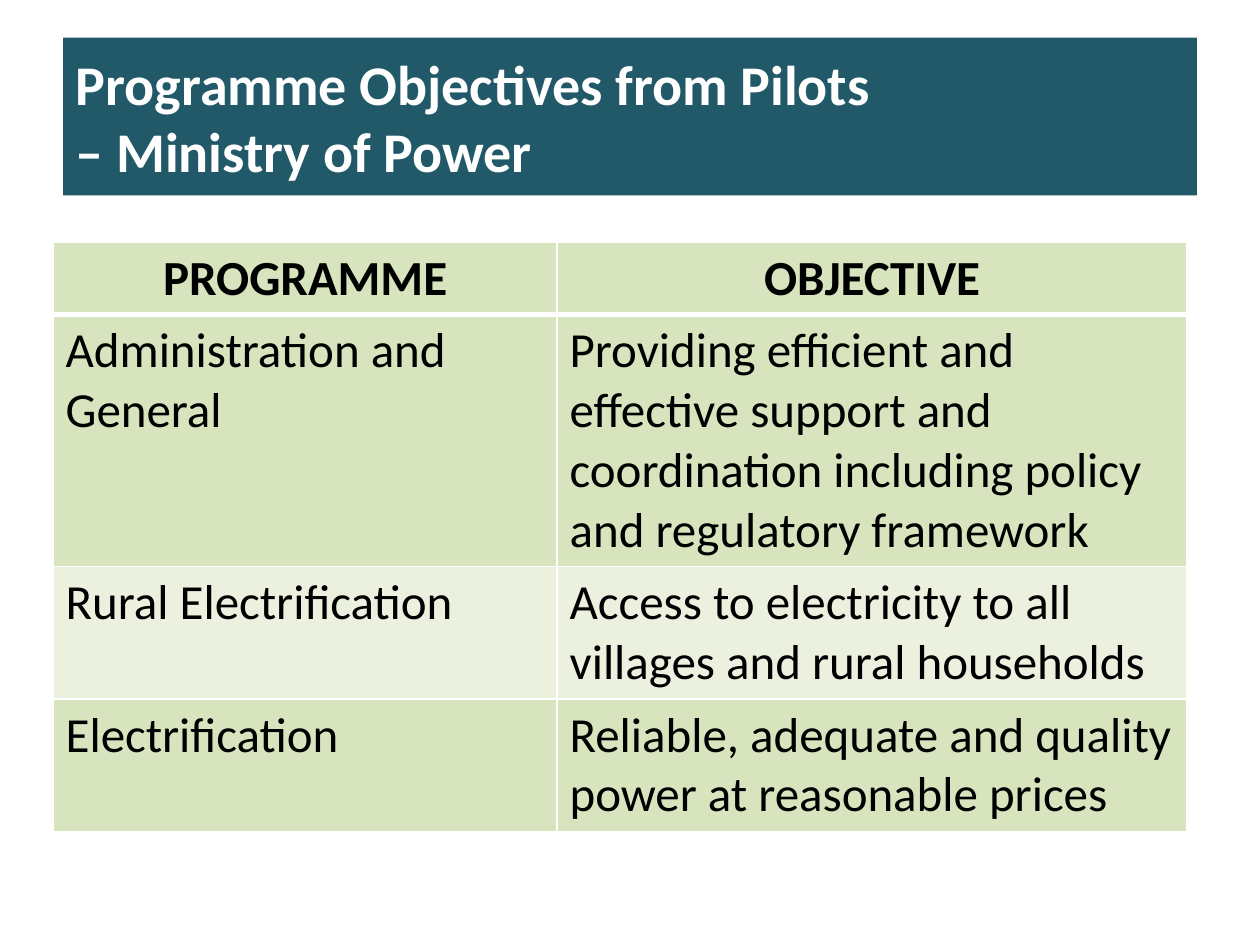
from dataclasses import dataclass

from lxml import etree
from pptx import Presentation
from pptx.dml.color import RGBColor
from pptx.enum.text import MSO_ANCHOR, MSO_AUTO_SIZE, PP_ALIGN
from pptx.oxml.ns import qn
from pptx.util import Cm, Pt

LEFT, CENTER = PP_ALIGN.LEFT, PP_ALIGN.CENTER
MIDDLE = MSO_ANCHOR.MIDDLE
NO_AUTOFIT = MSO_AUTO_SIZE.NONE
TITLE_ONLY = 5


@dataclass(frozen=True)
class Theme:
    font: str = "Calibri"
    title_size: int = 32
    table_size: int = 28
    banner: str = "215968"
    light: str = "FFFFFF"
    dark: str = "000000"
    bands: tuple = ("D7E4BD", "EBF1DE")
    thin: int = 1
    thick: int = 3


THEME = Theme()

TITLE = "Programme Objectives from Pilots \v– Ministry of Power"
HEADINGS = ("PROGRAMME", "OBJECTIVE")
PROGRAMMES = (
    ("Administration and General",
     "Providing efficient and effective support and coordination "
     "including policy and regulatory framework"),
    ("Rural Electrification",
     "Access to electricity to all villages and rural households"),
    ("Electrification",
     "Reliable, adequate and quality power at reasonable prices"),
)
COLUMN_SHARES = (4, 5)
ROW_HEIGHTS = (1.32, 3.28, 2.31, 2.31)


def write_text(frame, text, size, color, bold=False, align=LEFT):
    """Fill a text frame with one formatted paragraph."""
    frame.text = text
    para = frame.paragraphs[0]
    para.alignment = align
    for span in para.runs:
        span.font.name = THEME.font
        span.font.size = Pt(size)
        span.font.bold = bold
        span.font.color.rgb = RGBColor.from_string(color)


def paint(fill, color):
    fill.solid()
    fill.fore_color.rgb = RGBColor.from_string(color)


def add_borders(cell, top, bottom):
    """Draw the four cell borders; widths are in points."""
    properties = cell._tc.get_or_add_tcPr()
    widths = {"lnL": THEME.thin, "lnR": THEME.thin, "lnT": top, "lnB": bottom}
    for side, width in widths.items():
        line = etree.SubElement(properties, qn(f"a:{side}"), w=str(Pt(width)))
        solid = etree.SubElement(line, qn("a:solidFill"))
        etree.SubElement(solid, qn("a:srgbClr"), val=THEME.light)


def place_title(page, left, top, width, height):
    box = page.shapes.title
    box.left, box.top, box.width, box.height = left, top, width, height
    paint(box.fill, THEME.banner)
    frame = box.text_frame
    frame.word_wrap = True
    frame.auto_size = NO_AUTOFIT
    frame.vertical_anchor = MIDDLE
    write_text(frame, TITLE, THEME.title_size, THEME.light, bold=True)


def place_table(page, left, top, width, height):
    records = (HEADINGS, *PROGRAMMES)
    holder = page.shapes.add_table(
        len(records), len(HEADINGS), left, top, width, height)
    table = holder.table
    for column, share in zip(table.columns, COLUMN_SHARES):
        column.width = width * share // sum(COLUMN_SHARES)
    for row, row_height in zip(table.rows, ROW_HEIGHTS):
        row.height = Cm(row_height)
    holder.height = height

    for number, record in enumerate(records):
        heading = number == 0
        # The header shares the first band's colour; body rows alternate
        band = THEME.bands[0 if heading else (number - 1) % 2]
        for cell, text in zip(table.rows[number].cells, record):
            add_borders(cell,
                        top=THEME.thick if number == 1 else THEME.thin,
                        bottom=THEME.thick if heading else THEME.thin)
            paint(cell.fill, band)
            write_text(cell.text_frame, text, THEME.table_size, THEME.dark,
                       bold=heading, align=CENTER if heading else LEFT)


def main():
    deck = Presentation()
    deck.slide_width, deck.slide_height = Cm(25.4), Cm(19.05)
    page = deck.slides.add_slide(deck.slide_layouts[TITLE_ONLY])
    # Table first, so that the title banner lies in front
    place_table(page, Cm(1.07), Cm(4.88), Cm(22.86), Cm(11.68))
    place_title(page, Cm(1.27), Cm(0.76), Cm(22.86), Cm(3.18))
    deck.save("out.pptx")


if __name__ == "__main__":
    main()
